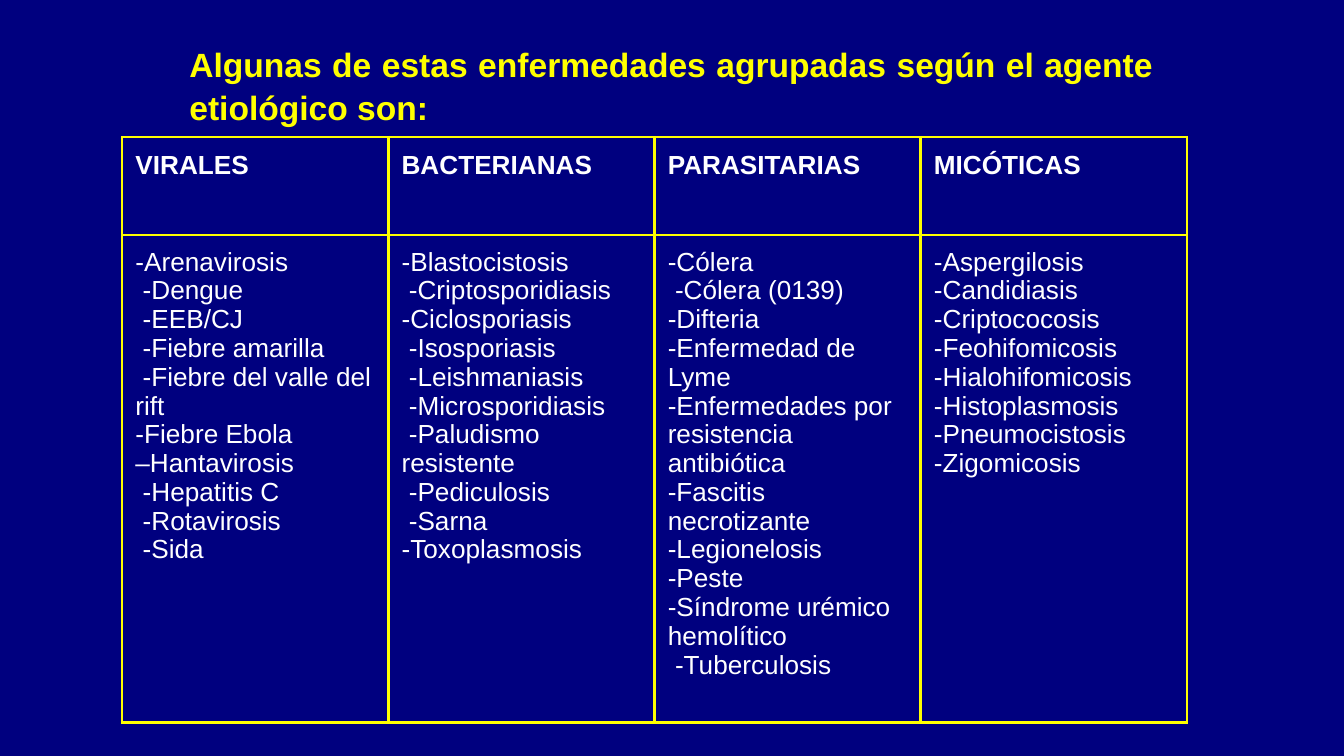
from lxml.etree import SubElement
from pptx import Presentation
from pptx.dml.color import RGBColor
from pptx.enum.text import PP_ALIGN
from pptx.oxml.ns import qn
from pptx.util import Cm, Pt

NAVY, YELLOW, WHITE = "00007F", "FFFF00", "FFFFFF"
MARGIN = Cm(0.25)
TITLE = "Algunas de estas enfermedades agrupadas según el agente etiológico son:"
DISEASES = {
    "VIRALES": [
        "-Arenavirosis", " -Dengue", " -EEB/CJ", " -Fiebre amarilla",
        " -Fiebre del valle del rift", "-Fiebre Ebola", "–Hantavirosis",
        " -Hepatitis C", " -Rotavirosis", " -Sida",
    ],
    "BACTERIANAS": [
        "-Blastocistosis", " -Criptosporidiasis", "-Ciclosporiasis",
        " -Isosporiasis", " -Leishmaniasis", " -Microsporidiasis",
        " -Paludismo resistente", " -Pediculosis", " -Sarna -Toxoplasmosis",
    ],
    "PARASITARIAS": [
        "-Cólera", " -Cólera (0139)", "-Difteria", "-Enfermedad de Lyme",
        "-Enfermedades por resistencia antibiótica", "-Fascitis necrotizante",
        "-Legionelosis", "-Peste", "-Síndrome urémico hemolítico",
        " -Tuberculosis",
    ],
    "MICÓTICAS": [
        "-Aspergilosis", "-Candidiasis", "-Criptococosis", "-Feohifomicosis",
        "-Hialohifomicosis", "-Histoplasmosis", "-Pneumocistosis",
        "-Zigomicosis",
    ],
}


def rgb(color):
    """Turn a hex string into a colour."""
    return RGBColor.from_string(color)


def set_margins(box):
    """Give a text frame or a cell equal margins."""
    box.margin_left = box.margin_right = MARGIN
    box.margin_top = box.margin_bottom = MARGIN


def style_text(tf, size, color, bold, spacing, align=PP_ALIGN.LEFT):
    """Format every paragraph and run of a text frame."""
    for p in tf.paragraphs:
        p.alignment = align
        p.line_spacing = spacing
        for r in p.runs:
            r.font.name = "Arial"
            r.font.size = Pt(size)
            r.font.bold = bold
            r.font.color.rgb = rgb(color)


def set_borders(cell, color, width):
    """Draw a solid line on the four sides of a cell."""
    tc_pr = cell._tc.get_or_add_tcPr()
    for side in ("a:lnL", "a:lnR", "a:lnT", "a:lnB"):
        ln = SubElement(tc_pr, qn(side), w=str(Pt(width)))
        fill = SubElement(ln, qn("a:solidFill"))
        SubElement(fill, qn("a:srgbClr"), val=color)


def add_title(s):
    """Add the justified title."""
    sp = s.shapes.add_textbox(Cm(3.33), Cm(0.53), Cm(18.72), Cm(4.14))
    tf = sp.text_frame
    tf.word_wrap = True
    set_margins(tf)
    tf.text = TITLE
    style_text(tf, 18, YELLOW, True, 1.07, PP_ALIGN.JUSTIFY)


def fill_cell(cell, text, bold, spacing):
    """Write a cell and give it borders and no fill."""
    cell.text_frame.text = text
    set_margins(cell)
    style_text(cell.text_frame, 14, WHITE, bold, spacing)
    set_borders(cell, YELLOW, 1.5)
    cell.fill.background()


def add_disease_table(s):
    """Add the table with one column for each kind of agent."""
    frame = s.shapes.add_table(2, len(DISEASES), Cm(2.31), Cm(2.59),
                               Cm(20.12), Cm(10.9))
    table = frame.table
    table.first_row = table.horz_banding = False
    table.rows[0].height, table.rows[1].height = Cm(1.85), Cm(9.04)
    for col, (agent, diseases) in enumerate(DISEASES.items()):
        fill_cell(table.cell(0, col), agent, True, 1.0)
        fill_cell(table.cell(1, col), "\n".join(diseases), False, 0.98)


def main():
    """Build and save the slide."""
    prs = Presentation()
    prs.slide_width, prs.slide_height = Cm(25.4), Cm(14.29)
    s = prs.slides.add_slide(prs.slide_layouts[6])
    s.background.fill.solid()
    s.background.fill.fore_color.rgb = rgb(NAVY)
    add_title(s)
    add_disease_table(s)
    prs.save("out.pptx")


if __name__ == "__main__":
    main()
